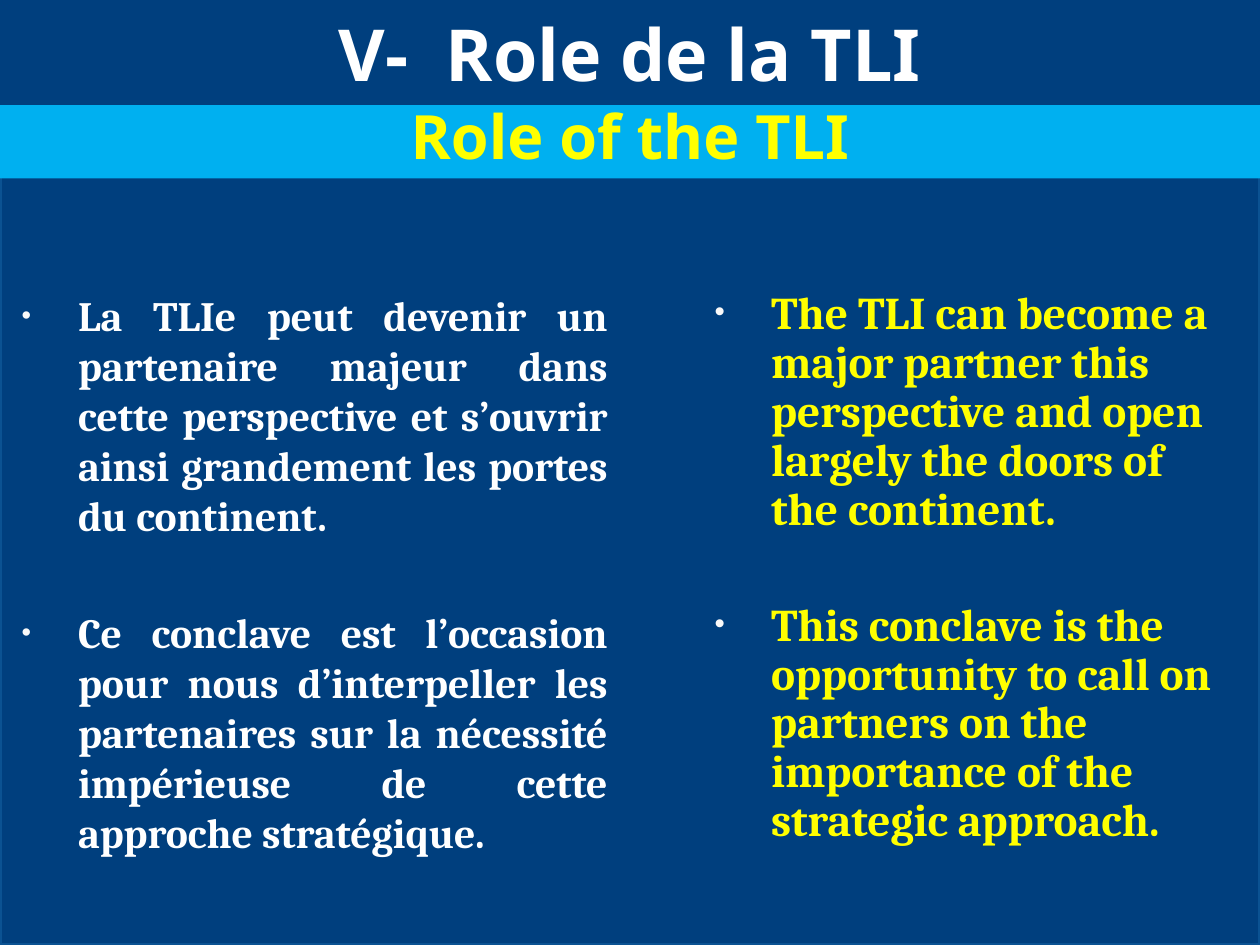
import pptx
import pptx.util
from lxml import etree
from pptx.dml.color import RGBColor
from pptx.enum.shapes import MSO_SHAPE
from pptx.enum.text import MSO_ANCHOR, MSO_AUTO_SIZE, PP_ALIGN
from pptx.oxml.ns import qn
from pptx.util import Cm, Pt

BLACK = RGBColor(0x00, 0x00, 0x00)
NAVY = RGBColor(0x00, 0x3F, 0x7E)
NAVY_EDGE = RGBColor(0x0B, 0x52, 0x92)
SKY = RGBColor(0x00, 0xB0, 0xF0)
WHITE = RGBColor(0xFF, 0xFF, 0xFF)
YELLOW = RGBColor(0xFF, 0xFF, 0x00)
BULLET_GREY = RGBColor(0xF9, 0xF9, 0xF9)

HEADING_FONT = "Noto Sans"
BODY_FONT = "Cambria"
SLIDE_WIDTH, SLIDE_HEIGHT = 25.4, 19.05  # cm
TITLE_HEIGHT, BANNER_HEIGHT = 2.12, 1.48
PANEL_TOP = 2.97
POINT_GAP = 38.3  # points between the two bullet points

FRENCH_POINTS = [
    "La TLIe peut devenir un partenaire majeur dans cette perspective et "
    "s’ouvrir ainsi grandement les portes du continent.",
    "Ce conclave est l’occasion pour nous d’interpeller les partenaires sur "
    "la nécessité impérieuse de cette approche stratégique.",
]
ENGLISH_POINTS = [
    "The TLI can become a major partner this perspective and open largely "
    "the doors of the continent.",
    "This conclave is the opportunity to call on partners on the importance "
    "of the strategic approach.",
]


def place(shape, box):
    shape.left, shape.top, shape.width, shape.height = map(Cm, box)


def style_font(paragraph, name, size, color):
    font = paragraph.font
    font.name, font.size, font.bold = name, Pt(size), True
    font.color.rgb = color


def add_bar(slide, box, fill):
    bar = slide.shapes.add_shape(MSO_SHAPE.RECTANGLE, *map(Cm, box))
    bar.shadow.inherit = False
    bar.fill.solid()
    bar.fill.fore_color.rgb = fill
    bar.line.fill.background()
    return bar


def write_heading(shape, text, size, color):
    frame = shape.text_frame
    frame.text = text
    frame.word_wrap = True
    frame.auto_size = MSO_AUTO_SIZE.NONE
    frame.vertical_anchor = MSO_ANCHOR.MIDDLE
    heading = frame.paragraphs[0]
    heading.alignment = PP_ALIGN.CENTER
    style_font(heading, HEADING_FONT, size, color)
    return heading


def set_bullet(paragraph):
    """Give the paragraph a hanging indent and a small pale dot."""
    properties = paragraph._p.get_or_add_pPr()
    properties.set("marL", str(Cm(1.52)))
    properties.set("indent", str(Cm(-1.14)))
    bullet_color = etree.SubElement(properties, qn("a:buClr"))
    etree.SubElement(bullet_color, qn("a:srgbClr"), val=str(BULLET_GREY))
    etree.SubElement(properties, qn("a:buSzPct"), val="65000")
    etree.SubElement(properties, qn("a:buChar"), char="•")


def add_panel(slide, box):
    panel = add_bar(slide, box, NAVY)
    panel.line.color.rgb = NAVY_EDGE
    panel.line.width = Pt(2)
    slide.shapes._spTree.insert(2, panel._element)  # behind the placeholders


def fill_title(title, box):
    place(title, box)
    title.fill.solid()
    title.fill.fore_color.rgb = NAVY
    write_heading(title, "V-  Role de la TLI", 41, WHITE)


def add_banner(slide, box):
    banner = add_bar(slide, box, SKY)
    heading = write_heading(banner, "Role of the TLI", 34.9, YELLOW)
    heading.line_spacing = 0.8


def fill_column(column, box, points, size, color, alignment, line_spacing):
    place(column, box)
    frame = column.text_frame
    frame.text = "\n".join(points)
    frame.word_wrap = True
    frame.auto_size = MSO_AUTO_SIZE.NONE
    for index, point in enumerate(frame.paragraphs):
        set_bullet(point)
        point.alignment = alignment
        point.line_spacing = line_spacing
        point.space_before = Pt(POINT_GAP if index else 0)
        style_font(point, BODY_FONT, size, color)


def main():
    deck = pptx.Presentation()
    deck.slide_width, deck.slide_height = Cm(SLIDE_WIDTH), Cm(SLIDE_HEIGHT)
    slide = deck.slides.add_slide(deck.slide_layouts.get_by_name("Two Content"))
    slide.background.fill.solid()
    slide.background.fill.fore_color.rgb = BLACK
    title, french, english = list(slide.placeholders)[:3]

    add_panel(slide, (0, PANEL_TOP, SLIDE_WIDTH, SLIDE_HEIGHT - PANEL_TOP))
    fill_title(title, (0, 0, SLIDE_WIDTH, TITLE_HEIGHT))
    add_banner(slide, (0, TITLE_HEIGHT, SLIDE_WIDTH, BANNER_HEIGHT))
    fill_column(french, (-0.2, 5.72, 12.7, 12.07), FRENCH_POINTS,
                23.8, WHITE, PP_ALIGN.JUSTIFY, 1.0)
    fill_column(english, (13.77, 5.72, 11, 11.86), ENGLISH_POINTS,
                25.9, YELLOW, PP_ALIGN.LEFT, 0.9)
    deck.save("out.pptx")


if __name__ == "__main__":
    main()
